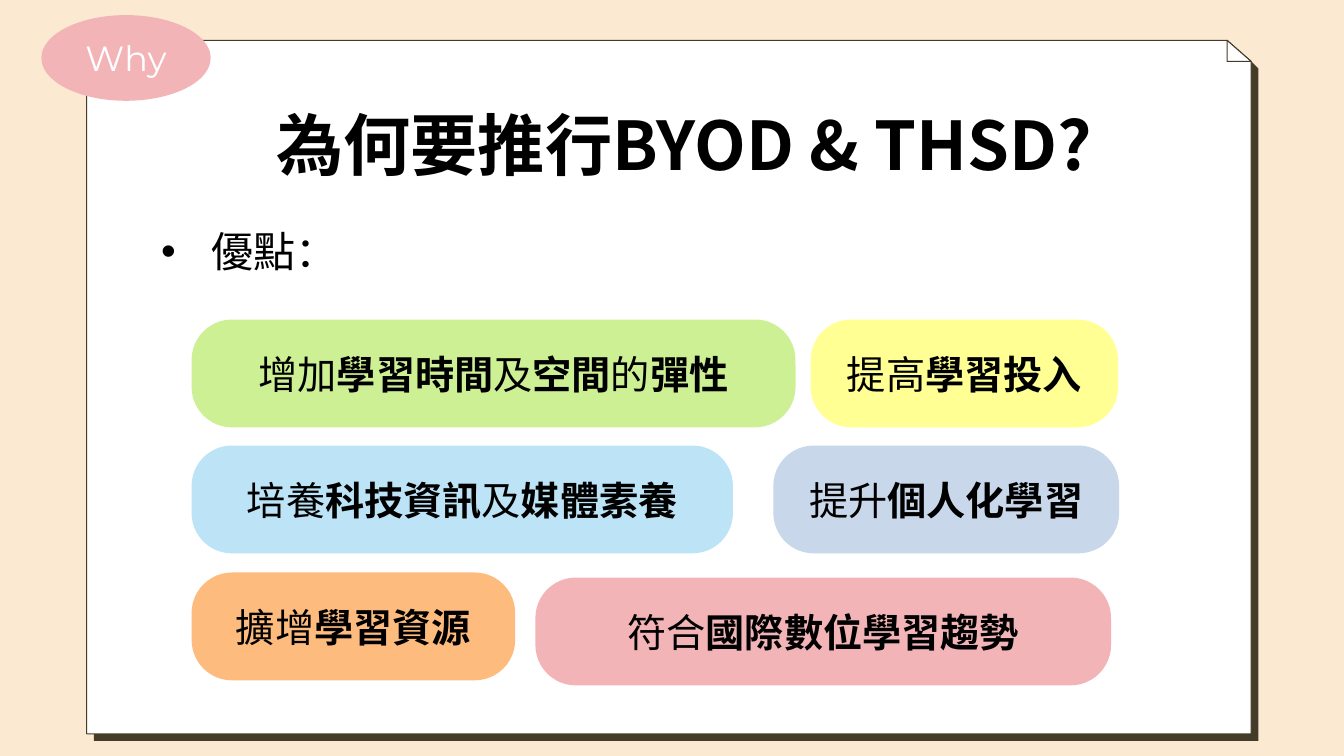
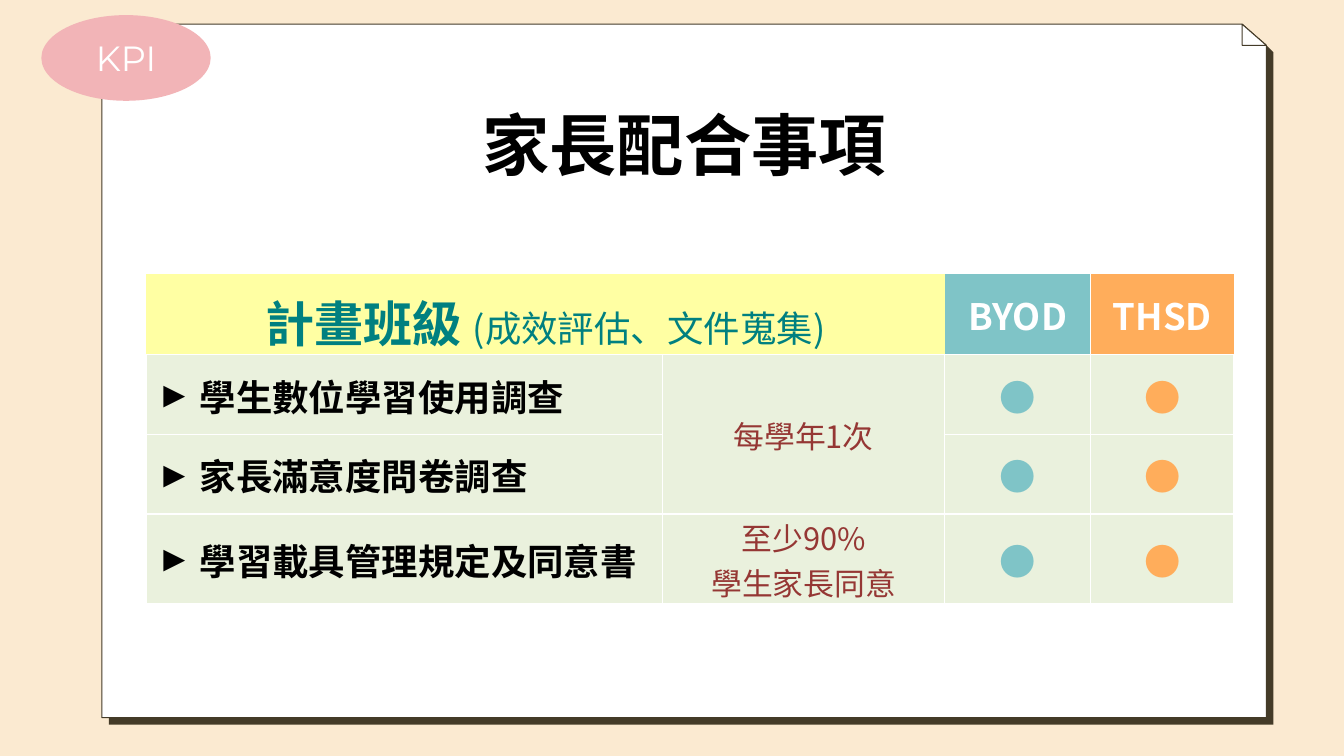
from dataclasses import dataclass

from lxml.etree import SubElement
from pptx import Presentation
from pptx.dml.color import RGBColor
from pptx.enum.shapes import MSO_SHAPE
from pptx.enum.text import MSO_ANCHOR, PP_ALIGN
from pptx.oxml.ns import qn
from pptx.util import Inches, Pt

SANS = "Noto Sans CJK TC"
ROUNDED = "Montserrat"
CREAM, WHITE, BLACK, BROWN, PINK = "FBEAD1", "FFFFFF", "000000", "443B28", "F2B4B7"
TEAL, ORANGE, GREEN, LEMON = "7FC4C7", "FFAD5B", "EAF1DD", "FFFFA3"
DARK_TEAL, MAROON = "008080", "953734"
NO_TABLE_STYLE = "{2D5ABB26-0587-4C30-8999-92F81FD0307C}"
FOLD_W, FOLD_H, DEPTH = 0.24, 0.21, 0.07
PAGE_W, PAGE_H = 11.55, 6.88


@dataclass
class Run:
    text: str
    size: float
    color: str = BLACK
    bold: bool = False
    font: str = SANS


@dataclass
class Pill:
    left: float
    top: float
    width: float
    color: str
    phrases: tuple[str, ...]


@dataclass
class Cell:
    row: int
    col: int
    fill: str
    lines: list[list[Run]]
    edges: str = "LRTB"
    rows: int = 1
    cols: int = 1
    bullet: bool = False
    spacing: float = 1.0


PILLS = [
    Pill(1.9, 3.17, 5.99, "CDF094", ("增加", "學習時間", "及", "空間", "的", "彈性")),
    Pill(8.04, 3.17, 3.05, "FFFF93", ("提高", "學習投入")),
    Pill(1.9, 4.42, 5.37, "BCE4F6", ("培養", "科技資訊", "及", "媒體素養")),
    Pill(7.67, 4.42, 3.43, "C8D7EA", ("提升", "個人化學習")),
    Pill(1.9, 5.68, 3.21, "FEBB7E", ("擴增", "學習資源")),
    Pill(5.31, 5.73, 5.71, PINK, ("符合", "國際數位學習趨勢")),
]
TASKS = ["學生數位學習使用調查", "家長滿意度問卷調查", "學習載具管理規定及同意書"]
PLANS = [("BYOD", TEAL, "RB"), ("THSD", ORANGE, "LB")]


def rgb(color: str) -> RGBColor:
    return RGBColor.from_string(color)


def paint(sp, fill: str, line: str | None = None) -> None:
    sp.shadow.inherit = False
    sp.fill.solid()
    sp.fill.fore_color.rgb = rgb(fill)
    if line:
        sp.line.color.rgb = rgb(line)
        sp.line.width = Pt(0.75)
    else:
        sp.line.fill.background()


def write(p, runs: list[Run], align=PP_ALIGN.CENTER) -> None:
    p.alignment = align
    for run in runs:
        r = p.add_run()
        r.text = run.text
        r.font.size = Pt(run.size)
        r.font.bold = run.bold
        r.font.color.rgb = rgb(run.color)
        r.font.name = run.font
        SubElement(r._r.get_or_add_rPr(), qn("a:ea")).set("typeface", run.font)


def add_bullet(p, char: str, left: float, hang: float) -> None:
    pPr = p._p.get_or_add_pPr()
    pPr.set("marL", str(Inches(left)))
    pPr.set("indent", str(-Inches(hang)))
    SubElement(pPr, qn("a:buFont")).set("typeface", "Arial")
    SubElement(pPr, qn("a:buChar")).set("char", char)


def add_text(s, left: float, top: float, width: float, height: float, anchor):
    tf = s.shapes.add_textbox(Inches(left), Inches(top), Inches(width), Inches(height)).text_frame
    tf.word_wrap = True
    tf.vertical_anchor = anchor
    return tf.paragraphs[0]


def add_label(s, kind, box: tuple[float, ...], fill: str, runs: list[Run]):
    sp = s.shapes.add_shape(kind, *(Inches(v) for v in box))
    paint(sp, fill)
    sp.text_frame.vertical_anchor = MSO_ANCHOR.MIDDLE
    write(sp.text_frame.paragraphs[0], runs)
    return sp


def add_polygon(s, left: float, top: float, points: list[tuple[float, float]],
                fill: str, line: str | None = None) -> None:
    corners = [(Inches(left + x), Inches(top + y)) for x, y in points]
    builder = s.shapes.build_freeform(*corners[0])
    builder.add_line_segments(corners[1:], close=True)
    paint(builder.convert_to_shape(), fill, line)


def add_page(prs, left: float, top: float, title: str, tag: str):
    s = prs.slides.add_slide(prs.slide_layouts[6])
    s.background.fill.solid()
    s.background.fill.fore_color.rgb = rgb(CREAM)
    w, h, fold_x = PAGE_W, PAGE_H, PAGE_W - FOLD_W
    shadow = [(DEPTH, FOLD_H), (w, FOLD_H), (w + DEPTH, FOLD_H + DEPTH),
              (w + DEPTH, h + DEPTH), (DEPTH, h + DEPTH)]
    add_polygon(s, left, top, shadow, BROWN)
    add_polygon(s, left, top, [(0, 0), (fold_x, 0), (w, FOLD_H), (w, h), (0, h)], WHITE, BROWN)
    add_polygon(s, left, top, [(fold_x, 0), (w, FOLD_H), (fold_x, FOLD_H)], WHITE, BROWN)
    write(add_text(s, 1.49, 0.67, 10.59, 1.51, MSO_ANCHOR.MIDDLE), [Run(title, 48, bold=True)])
    add_label(s, MSO_SHAPE.OVAL, (0.41, 0.15, 1.68, 0.85), PINK,
              [Run(tag, 25, WHITE, font=ROUNDED)])
    return s


def add_borders(cell, edges: str) -> None:
    tcPr = cell._tc.get_or_add_tcPr()
    for edge in "LRTB":
        ln = SubElement(tcPr, qn(f"a:ln{edge}"), w=str(Pt(1)))
        if edge in edges:
            SubElement(SubElement(ln, qn("a:solidFill")), qn("a:srgbClr"), val=WHITE)
        else:
            SubElement(ln, qn("a:noFill"))


def fill_cell(table, item: Cell) -> None:
    for row in range(item.row, item.row + item.rows):
        for col in range(item.col, item.col + item.cols):
            add_borders(table.cell(row, col), item.edges)
    cell = table.cell(item.row, item.col)
    if item.rows * item.cols > 1:
        cell.merge(table.cell(item.row + item.rows - 1, item.col + item.cols - 1))
    cell.fill.solid()
    cell.fill.fore_color.rgb = rgb(item.fill)
    cell.vertical_anchor = MSO_ANCHOR.MIDDLE
    cell.margin_left = cell.margin_right = cell.margin_top = Inches(0.01)
    cell.margin_bottom = 0
    for i, runs in enumerate(item.lines):
        p = cell.text_frame.add_paragraph() if i else cell.text_frame.paragraphs[0]
        p.line_spacing = item.spacing
        write(p, runs, PP_ALIGN.LEFT if item.bullet else PP_ALIGN.CENTER)
        if item.bullet:
            add_bullet(p, "►", 0.52, 0.43)


def kpi_cells() -> list[Cell]:
    heading = [Run("計畫班級 ", 35, DARK_TEAL, True), Run("(成效評估、文件蒐集)", 26, DARK_TEAL)]
    cells = [
        Cell(0, 0, LEMON, [heading], "B", cols=2, spacing=1.14),
        Cell(1, 1, GREEN, [[Run("每學年1次", 22, MAROON)]], rows=2),
        Cell(3, 1, GREEN, [[Run(t, 22, MAROON)] for t in ("至少90%", "學生家長同意")]),
    ]
    for row, task in enumerate(TASKS, 1):
        cells.append(Cell(row, 0, GREEN, [[Run(task, 26, bold=True)]], bullet=True))
    for col, (plan, color, edges) in enumerate(PLANS, 2):
        cells.append(Cell(0, col, color, [[Run(plan, 26, WHITE, True)]], edges))
        for row in range(1, len(TASKS) + 1):
            cells.append(Cell(row, col, GREEN, [[Run("●", 26, color, True)]]))
    return cells


def build_why(prs) -> None:
    s = add_page(prs, 0.86, 0.4, "為何要推行BYOD & THSD?", "Why")
    p = add_text(s, 1.5, 2.19, 10.59, 0.7, MSO_ANCHOR.TOP)
    write(p, [Run("優點：", 30)], PP_ALIGN.LEFT)
    add_bullet(p, "•", 0.5, 0.5)
    for pill in PILLS:
        runs = [Run(phrase, 28, bold=i % 2 == 1) for i, phrase in enumerate(pill.phrases)]
        sp = add_label(s, MSO_SHAPE.ROUNDED_RECTANGLE,
                       (pill.left, pill.top, pill.width, 1.07), pill.color, runs)
        sp.adjustments[0] = 0.375


def build_kpi(prs) -> None:
    s = add_page(prs, 1.01, 0.24, "家長配合事項", "KPI")
    widths, heights = (5.12, 2.8, 1.45, 1.42), (0.8, 0.79, 0.79, 0.89)
    table = s.shapes.add_table(len(heights), len(widths), Inches(1.45), Inches(2.72),
                               Inches(sum(widths)), Inches(sum(heights))).table
    table.first_row = table.horz_banding = False
    table._tbl.tblPr.find(qn("a:tableStyleId")).text = NO_TABLE_STYLE
    for column, width in zip(table.columns, widths):
        column.width = Inches(width)
    for row, height in zip(table.rows, heights):
        row.height = Inches(height)
    for item in kpi_cells():
        fill_cell(table, item)


def main() -> None:
    prs = Presentation()
    prs.slide_width, prs.slide_height = Inches(13.33), Inches(7.5)
    build_why(prs)
    build_kpi(prs)
    prs.save("out.pptx")


if __name__ == "__main__":
    main()
